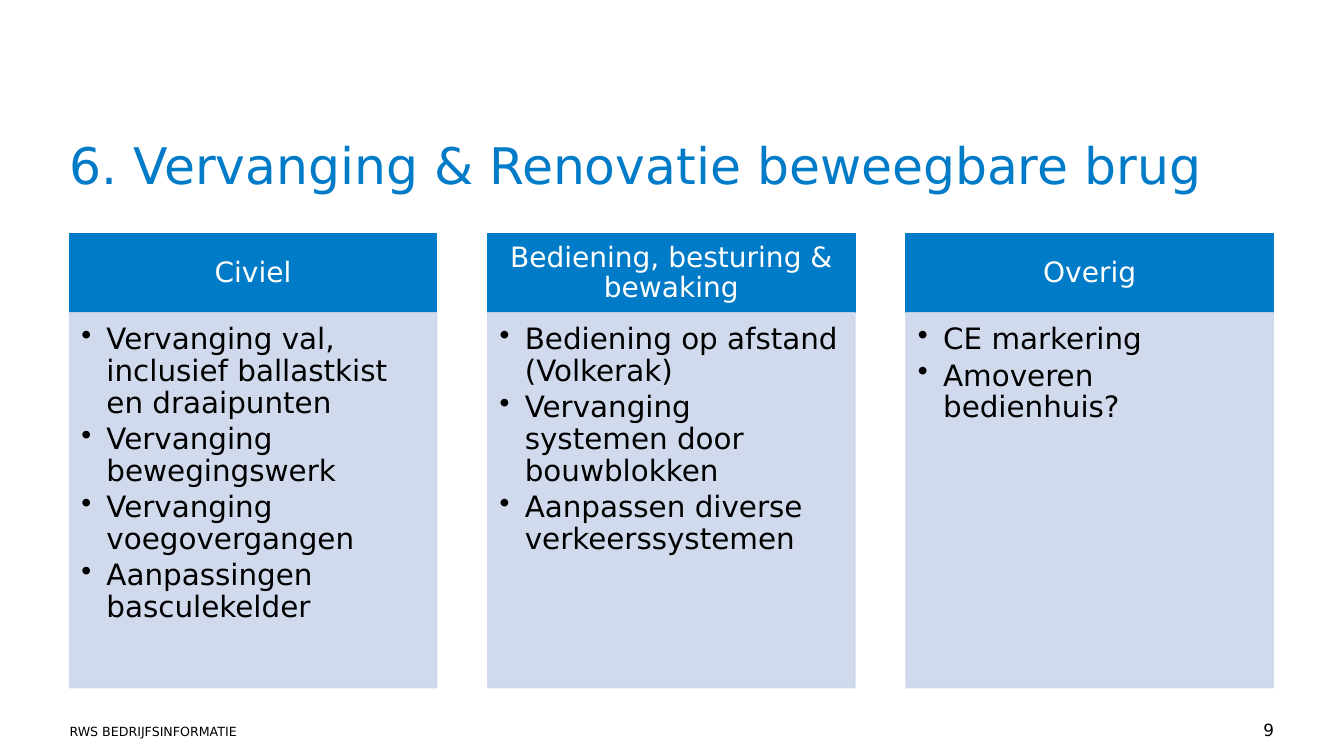
from lxml import etree
from pptx import Presentation
from pptx.dml.color import RGBColor
from pptx.enum import shapes, text
from pptx.oxml import ns
from pptx.util import Pt

# Content
TITLE = "6. Vervanging & Renovatie beweegbare brug"
COLUMNS = [
    ("Civiel", [
        "Vervanging val, inclusief ballastkist en draaipunten",
        "Vervanging bewegingswerk",
        "Vervanging voegovergangen",
        "Aanpassingen basculekelder",
    ]),
    ("Bediening, besturing & bewaking", [
        "Bediening op afstand (Volkerak)",
        "Vervanging systemen door bouwblokken",
        "Aanpassen diverse verkeerssystemen",
    ]),
    ("Overig", [
        "CE markering",
        "Amoveren bedienhuis?",
    ]),
]
CLASSIFICATION = "RWS BEDRIJFSINFORMATIE"
PAGE_NUMBER = "9"

# Style and layout, in points
FONT = "DejaVu Sans"
BLUE = RGBColor(0x00, 0x7B, 0xC7)
PALE = RGBColor(0xCC, 0xD7, 0xEB)
WHITE = RGBColor(0xFF, 0xFF, 0xFF)
BLACK = RGBColor(0x00, 0x00, 0x00)
LEFT, COLUMN_WIDTH, COLUMN_PITCH = 49.7, 262.2, 298.8
HEADING_TOP, HEADING_HEIGHT = 166.8, 56.6
LIST_TOP, LIST_HEIGHT = HEADING_TOP + HEADING_HEIGHT, 267.8
FOOTER_TOP, FOOTER_HEIGHT = 514, 14.4
INDENT = 18
TOP, MIDDLE, BOTTOM = (text.MSO_ANCHOR.TOP, text.MSO_ANCHOR.MIDDLE,
                       text.MSO_ANCHOR.BOTTOM)
ALIGN = text.PP_ALIGN


def write(box, lines, size, color, align=ALIGN.LEFT, anchor=TOP,
          insets=(0, 0, 0, 0), spacing=0.9, after=0, bullets=False):
    frame = box.text_frame
    frame.word_wrap = True
    frame.vertical_anchor = anchor
    (frame.margin_left, frame.margin_top,
     frame.margin_right, frame.margin_bottom) = map(Pt, insets)
    frame.text = "\n".join(lines)
    for paragraph in frame.paragraphs:
        if bullets:
            props = paragraph._p.get_or_add_pPr()
            props.set("marL", str(Pt(INDENT)))
            props.set("indent", str(-Pt(INDENT)))
            etree.SubElement(props, ns.qn("a:buChar")).set("char", "•")
        paragraph.alignment = align
        paragraph.line_spacing = spacing
        paragraph.space_after = Pt(after)
        for run in paragraph.runs:
            run.font.name = FONT
            run.font.size = Pt(size)
            run.font.color.rgb = color


def add_panel(left, top, height, color, opacity=100):
    panel = slide.shapes.add_shape(shapes.MSO_SHAPE.RECTANGLE, Pt(left), Pt(top),
                                   Pt(COLUMN_WIDTH), Pt(height))
    panel.shadow.inherit = False
    panel.fill.solid()
    panel.fill.fore_color.rgb = color
    panel.line.color.rgb = color
    panel.line.width = Pt(1)
    if opacity < 100:
        for tint in panel._element.spPr.iter(ns.qn("a:srgbClr")):
            etree.SubElement(tint, ns.qn("a:alpha")).set("val", str(opacity * 1000))
    return panel


def add_label(left, top, width, height, *args, **style):
    label = slide.shapes.add_textbox(Pt(left), Pt(top), Pt(width), Pt(height))
    write(label, *args, **style)


deck = Presentation()
deck.slide_width, deck.slide_height = Pt(960), Pt(540)
slide = deck.slides.add_slide(deck.slide_layouts[6])

# Columns: heading above bulleted list
for index, (heading, items) in enumerate(COLUMNS):
    left = LEFT + index * COLUMN_PITCH
    heading_panel = add_panel(left, HEADING_TOP, HEADING_HEIGHT, BLUE)
    write(heading_panel, [heading], 20, WHITE, ALIGN.CENTER, MIDDLE,
          insets=(11.2, 6.4, 11.2, 6.4), after=7)
    list_panel = add_panel(left, LIST_TOP, LIST_HEIGHT, PALE, opacity=90)
    write(list_panel, items, 21, BLACK, insets=(8.4, 8.4, 11.2, 12.6),
          after=3.15, bullets=True)

# Title and footer
add_label(LEFT, 100.8, 861, 84.2, [TITLE], 36, BLUE)
add_label(LEFT, FOOTER_TOP, 335.5, FOOTER_HEIGHT, [CLASSIFICATION], 9, BLACK,
          anchor=BOTTOM)
add_label(869.8, FOOTER_TOP, 40.3, FOOTER_HEIGHT, [PAGE_NUMBER], 12, BLACK,
          align=ALIGN.RIGHT, anchor=BOTTOM, spacing=1.0)

deck.save("out.pptx")
